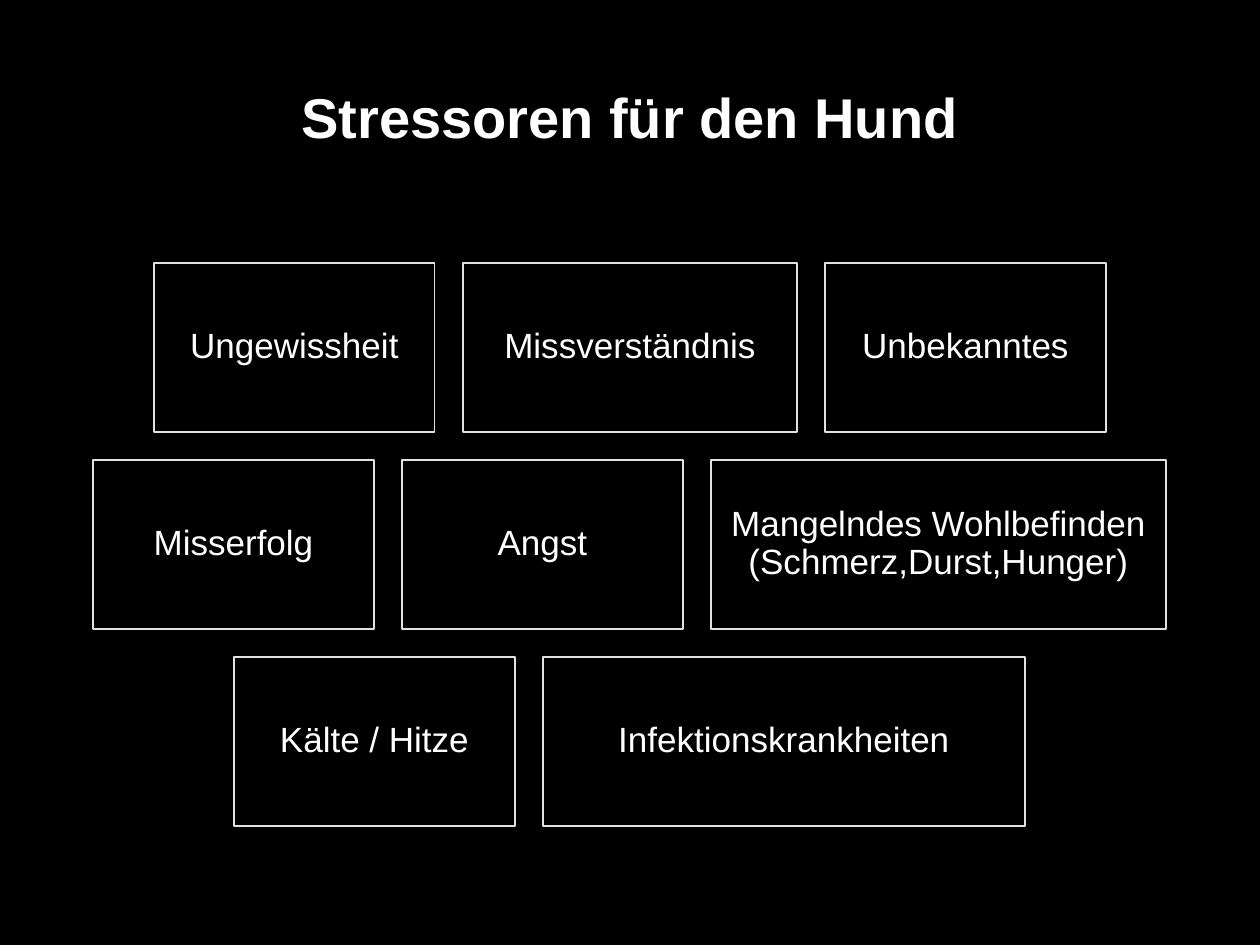
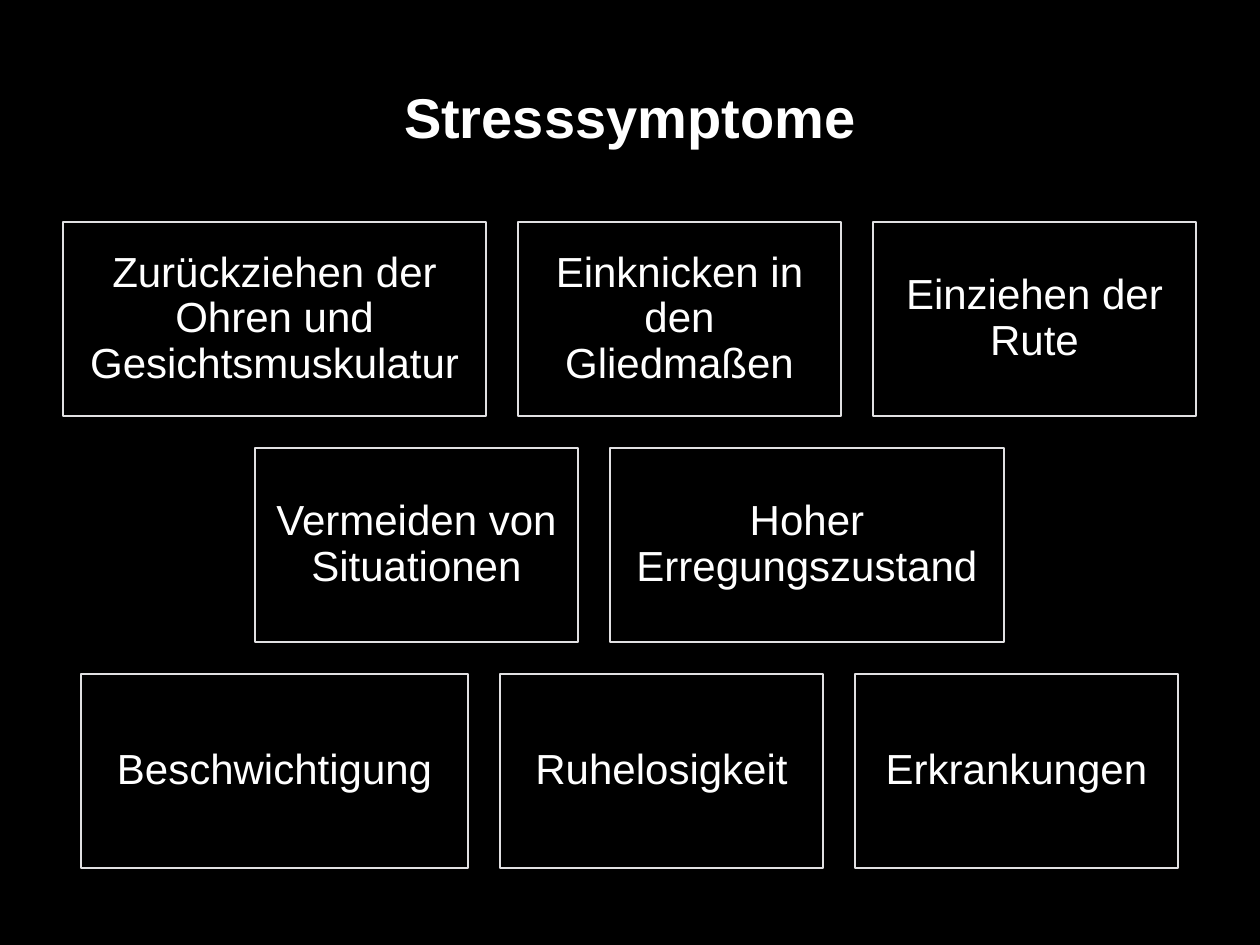
from dataclasses import dataclass

from pptx import Presentation
from pptx.dml.color import RGBColor
from pptx.enum.shapes import MSO_SHAPE
from pptx.enum.text import MSO_ANCHOR, PP_ALIGN
from pptx.util import Pt

RECT = MSO_SHAPE.RECTANGLE
MIDDLE = MSO_ANCHOR.MIDDLE
CENTER = PP_ALIGN.CENTER
PX = 914400 // 126
SLIDE_W, SLIDE_H = 1260, 945


@dataclass(frozen=True)
class Theme:
    background: RGBColor = RGBColor(0x00, 0x00, 0x00)
    text: RGBColor = RGBColor(0xFF, 0xFF, 0xFF)
    border: RGBColor = RGBColor(0xE1, 0xE0, 0xE2)
    font: str = "Arial"
    title_size: int = 32
    border_width: float = 0.75


THEME = Theme()

# Each row is a list of (box width, paragraphs); rows are centred on the slide.
SLIDES = [
    {
        "title": "Stressoren für den Hund",
        "top": 263, "height": 169, "gap": 28, "inset": 10, "size": 20,
        "rows": [
            [(281, ["Ungewissheit"]), (334, ["Missverständnis"]), (281, ["Unbekanntes"])],
            [(281, ["Misserfolg"]), (281, ["Angst"]),
             (455, ["Mangelndes Wohlbefinden", "(Schmerz,Durst,Hunger)"])],
            [(281, ["Kälte / Hitze"]), (482, ["Infektionskrankheiten"])],
        ],
    },
    {
        "title": "Stresssymptome",
        "top": 222, "height": 194, "gap": 32, "inset": 12, "size": 24,
        "rows": [
            [(423, ["Zurückziehen der Ohren und Gesichtsmuskulatur"]),
             (323, ["Einknicken in den Gliedmaßen"]), (323, ["Einziehen der Rute"])],
            [(323, ["Vermeiden von Situationen"]), (394, ["Hoher Erregungszustand"])],
            [(387, ["Beschwichtigung"]), (323, ["Ruhelosigkeit"]), (323, ["Erkrankungen"])],
        ],
    },
]


def write_centered(sp, paragraphs, size, inset, bold=False):
    tf = sp.text_frame
    tf.word_wrap = True
    tf.vertical_anchor = MIDDLE
    tf.margin_left = tf.margin_right = tf.margin_top = tf.margin_bottom = inset * PX
    for i, text in enumerate(paragraphs):
        p = tf.add_paragraph() if i else tf.paragraphs[0]
        p.alignment = CENTER
        if not bold:
            p.line_spacing = 0.9
        r = p.add_run()
        r.text = text
        r.font.name = THEME.font
        r.font.size = Pt(size)
        r.font.bold = bold
        r.font.color.rgb = THEME.text


prs = Presentation()
prs.slide_width = SLIDE_W * PX
prs.slide_height = SLIDE_H * PX
blank = prs.slide_layouts[6]

for content in SLIDES:
    s = prs.slides.add_slide(blank)
    s.background.fill.solid()
    s.background.fill.fore_color.rgb = THEME.background

    title = s.shapes.add_textbox(63 * PX, 38 * PX, 1134 * PX, 157 * PX)
    write_centered(title, [content["title"]], THEME.title_size, 6, bold=True)

    height, gap = content["height"], content["gap"]
    for row_index, row in enumerate(content["rows"]):
        top = content["top"] + row_index * (height + gap)
        row_width = sum(width for width, _ in row) + gap * (len(row) - 1)
        left = (SLIDE_W - row_width) // 2
        for width, paragraphs in row:
            sp = s.shapes.add_shape(RECT, left * PX, top * PX, width * PX, height * PX)
            sp.shadow.inherit = False
            sp.fill.background()
            sp.line.color.rgb = THEME.border
            sp.line.width = Pt(THEME.border_width)
            write_centered(sp, paragraphs, content["size"], content["inset"])
            left += width + gap

prs.save("out.pptx")
